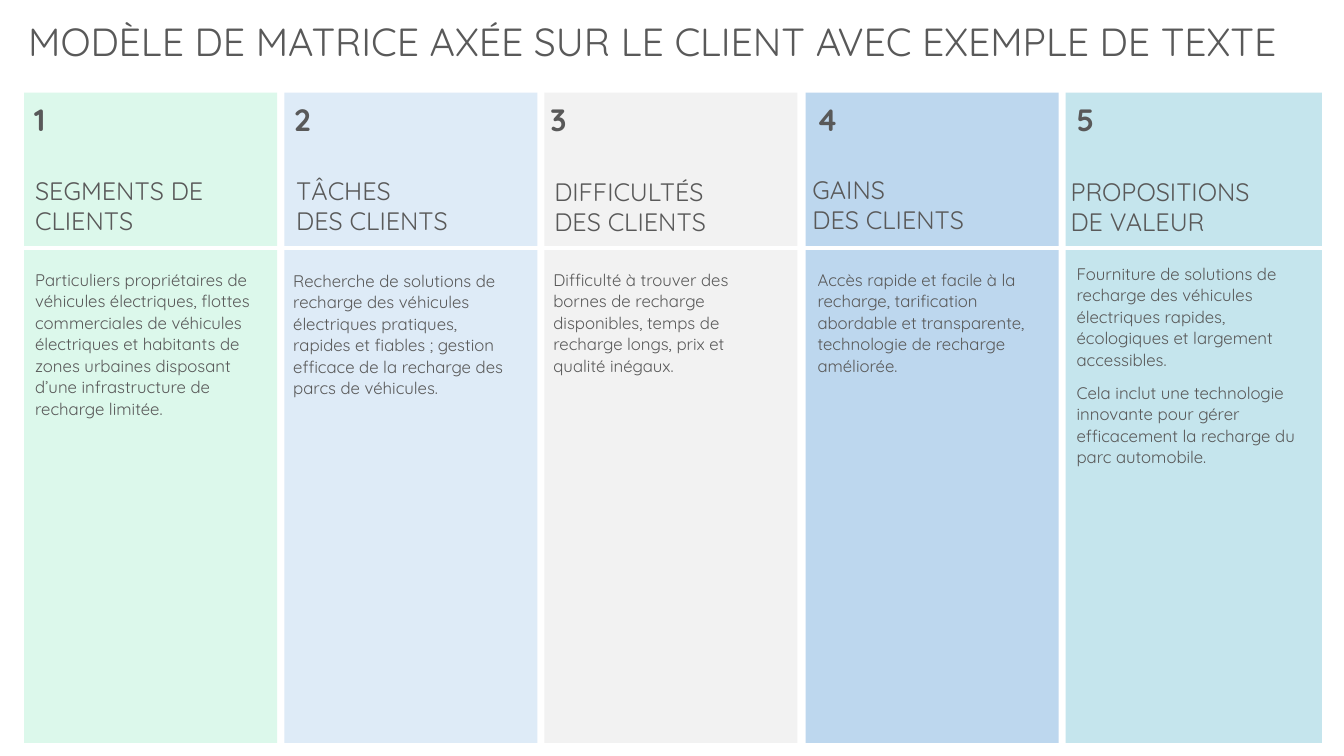
from dataclasses import dataclass

from lxml.etree import SubElement
from pptx import Presentation
from pptx.dml.color import RGBColor
from pptx.enum.shapes import MSO_CONNECTOR as Connector, MSO_SHAPE as Shape
from pptx.enum.text import MSO_ANCHOR as Anchor, MSO_AUTO_SIZE as AutoSize, PP_ALIGN as Align
from pptx.oxml.ns import qn
from pptx.util import Pt

EMU_PER_PX = 9144
TITLE_ONLY = 5


@dataclass(frozen=True)
class Theme:
    font: str = "Quicksand"
    ink: str = "595959"
    rule: str = "FFFFFF"
    title_size: int = 28
    number_size: int = 22
    heading_size: int = 18
    body_size: int = 12
    rule_width: float = 2.25
    line_spacing: float = 1.07
    space_after: int = 8


@dataclass(frozen=True)
class Box:
    left: int
    top: int
    width: int
    height: int

    def inner(self, dx, dy, width, height):
        return Box(self.left + dx, self.top + dy, width, height)

    def emu(self):
        return [px(n) for n in (self.left, self.top, self.width, self.height)]


@dataclass(frozen=True)
class Column:
    fill: str
    heading: str
    body: tuple
    number_dx: int
    heading_at: tuple
    body_at: tuple
    panel_width: int = 251
    heading_width: int = 250
    body_size: tuple = (238, 157)


THEME = Theme()
TITLE = "MODÈLE DE MATRICE AXÉE SUR LE CLIENT AVEC EXEMPLE DE TEXTE"
TITLE_BOX = Box(18, 12, 1295, 57)
MATRIX_BOX = Box(24, 92, 1296, 645)
COLUMN_PITCH = 258.25
RULE_DY = 154

COLUMNS = (
    Column("DCF8EB", "SEGMENTS DE CLIENTS",
           ("Particuliers propriétaires de véhicules électriques, flottes commerciales de "
            "véhicules électriques et habitants de zones urbaines disposant d’une "
            "infrastructure de recharge limitée.",),
           0, (1, 77), (1, 169)),
    Column("DEEBF7", "TÂCHES\vDES CLIENTS",
           ("Recherche de solutions de recharge des véhicules électriques pratiques, rapides "
            "et fiables ; gestion efficace de la recharge des parcs de véhicules.",),
           0, (2, 77), (-1, 170), body_size=(235, 157)),
    Column("F2F2F2", "DIFFICULTÉS\vDES CLIENTS",
           ("Difficulté à trouver des bornes de recharge disponibles, temps de recharge "
            "longs, prix et qualité inégaux.",),
           -4, (0, 78), (-1, 169), body_size=(235, 157)),
    Column("BDD7EE", "GAINS\vDES CLIENTS",
           ("Accès rapide et facile à la recharge, tarification abordable et transparente, "
            "technologie de recharge améliorée.",),
           1, (-3, 76), (2, 169)),
    Column("C5E5ED", "PROPOSITIONS DE VALEUR",
           ("Fourniture de solutions de recharge des véhicules électriques rapides, "
            "écologiques et largement accessibles.",
            "Cela inclut une technologie innovante pour gérer efficacement la recharge du "
            "parc automobile."),
           1, (-5, 78), (1, 163), panel_width=254, heading_width=224, body_size=(250, 249)),
)


def px(length):
    return round(length * EMU_PER_PX)


def color(code):
    return RGBColor.from_string(code)


def write(frame, paragraphs, size, bold=False, spaced=False):
    frame.word_wrap = True
    frame.text = "\n".join(paragraphs)
    for para in frame.paragraphs:
        para.alignment = Align.LEFT
        if spaced:
            para.line_spacing = THEME.line_spacing
            para.space_after = Pt(THEME.space_after)
        for span in para.runs:
            span.font.name = THEME.font
            span.font.size = Pt(size)
            span.font.bold = bold
            span.font.color.rgb = color(THEME.ink)


def add_text(page, box, paragraphs, size, **style):
    write(page.shapes.add_textbox(*box.emu()).text_frame, paragraphs, size, **style)


def add_title(page, box):
    title = page.shapes.title
    title.left, title.top, title.width, title.height = box.emu()
    frame = title.text_frame
    frame.vertical_anchor = Anchor.TOP
    frame.auto_size = AutoSize.NONE
    write(frame, [TITLE], THEME.title_size)


def add_panel(page, box, fill):
    panel = page.shapes.add_shape(Shape.RECTANGLE, *box.emu())
    panel.shadow.inherit = False
    panel.fill.solid()
    panel.fill.fore_color.rgb = color(fill)
    panel.line.fill.background()


def add_rule(page, box):
    y = px(box.top + RULE_DY)
    rule = page.shapes.add_connector(
        Connector.STRAIGHT, px(box.left), y, px(box.left + box.width), y)
    rule.line.color.rgb = color(THEME.rule)
    rule.line.width = Pt(THEME.rule_width)
    SubElement(rule.element.spPr, qn("a:effectLst"))


def add_column_text(page, box, number, column):
    add_text(page, box.inner(column.number_dx, 0, 46, 64), [str(number)],
             THEME.number_size, bold=True, spaced=True)
    add_text(page, box.inner(*column.heading_at, column.heading_width, 71),
             [column.heading], THEME.heading_size)
    add_text(page, box.inner(*column.body_at, *column.body_size),
             column.body, THEME.body_size, spaced=True)


def add_matrix(page, box):
    boxes = [box.inner(round(i * COLUMN_PITCH), 0, column.panel_width, box.height)
             for i, column in enumerate(COLUMNS)]
    for column_box, column in zip(boxes, COLUMNS):
        add_panel(page, column_box, column.fill)
    add_rule(page, box)
    for number, (column_box, column) in enumerate(zip(boxes, COLUMNS), start=1):
        add_column_text(page, column_box, number, column)


def main():
    deck = Presentation()
    deck.slide_width, deck.slide_height = px(1333), px(750)
    page = deck.slides.add_slide(deck.slide_layouts[TITLE_ONLY])
    add_title(page, TITLE_BOX)
    add_matrix(page, MATRIX_BOX)
    deck.save("out.pptx")


if __name__ == "__main__":
    main()
